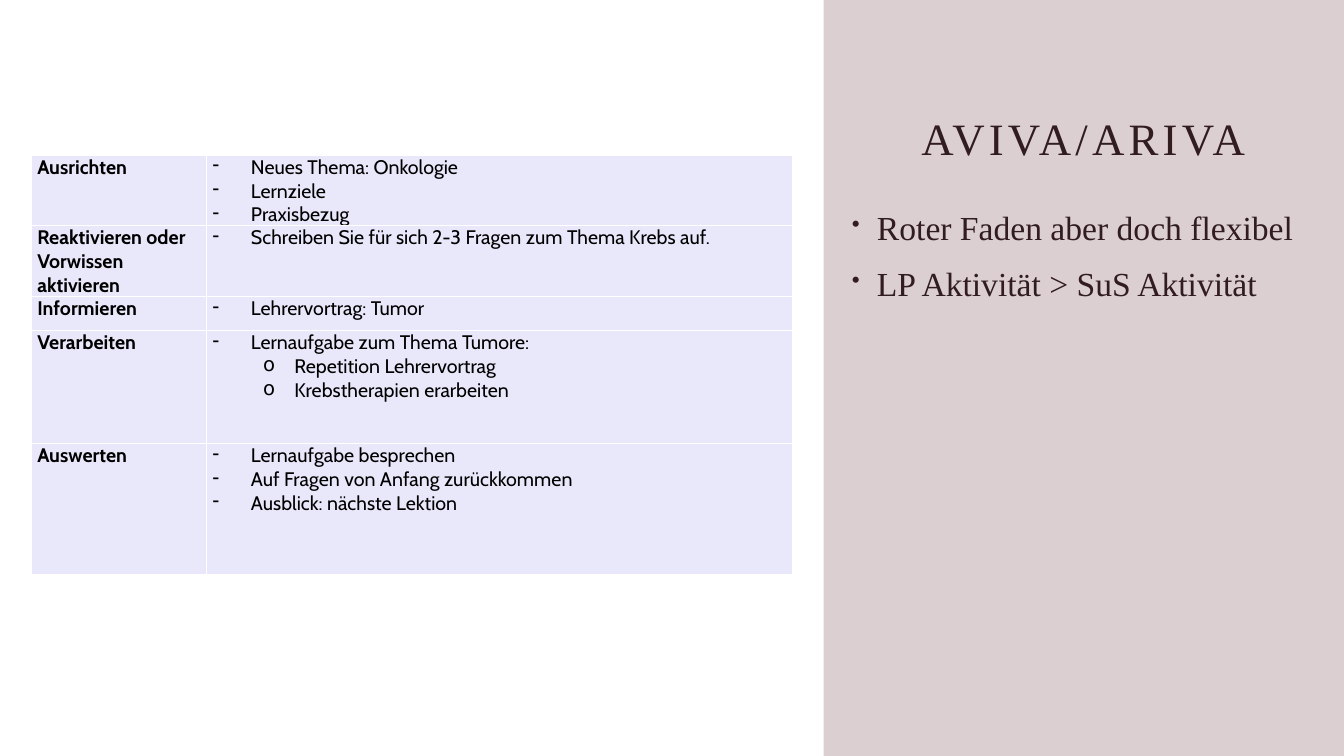
from dataclasses import dataclass

from lxml import etree
from pptx import Presentation
from pptx.dml.color import RGBColor
from pptx.enum.shapes import MSO_SHAPE
from pptx.enum.text import MSO_ANCHOR, PP_ALIGN
from pptx.oxml.ns import qn
from pptx.util import Inches, Pt

RECTANGLE = MSO_SHAPE.RECTANGLE
BOTTOM, TOP = MSO_ANCHOR.BOTTOM, MSO_ANCHOR.TOP
CENTER, LEFT = PP_ALIGN.CENTER, PP_ALIGN.LEFT


@dataclass(frozen=True)
class Theme:
    panel: str = "76434D"
    heading: str = "311C20"
    cell: str = "E9E8FA"
    border: str = "FFFFFF"
    table_text: str = "000000"
    serif: str = "Times New Roman"
    sans: str = "Cabin"
    title_size: int = 32
    body_size: int = 24
    table_size: int = 14


THEME = Theme()
COLUMN_WIDTHS = [1.74, 5.81]
DASH = {"bullet": "-", "margin": 0.38, "indent": -0.38}
CIRCLE = {"bullet": "o", "margin": 0.81, "indent": -0.31, "level": 1}
DOT = {"bullet": "•", "margin": 0.25, "indent": -0.25, "bullet_size": 70}

PHASES = [
    ("Ausrichten", 0.62, [
        ("Neues Thema: Onkologie", DASH),
        ("Lernziele", DASH),
        ("Praxisbezug", DASH),
    ]),
    ("Reaktivieren oder Vorwissen aktivieren", 0.62, [
        ("Schreiben Sie für sich 2-3 Fragen zum Thema Krebs auf.", DASH),
    ]),
    ("Informieren", 0.34, [("Lehrervortrag: Tumor", DASH)]),
    ("Verarbeiten", 1.12, [
        ("Lernaufgabe zum Thema Tumore:", DASH),
        ("Repetition Lehrervortrag", CIRCLE),
        ("Krebstherapien erarbeiten", CIRCLE),
    ]),
    ("Auswerten", 1.3, [
        ("Lernaufgabe besprechen", DASH),
        ("Auf Fragen von Anfang zurückkommen", DASH),
        ("Ausblick: nächste Lektion", DASH),
    ]),
]
KEY_POINTS = ["Roter Faden aber doch flexibel", "LP Aktivität > SuS Aktivität"]


def add_bullet(paragraph, bullet, margin, indent, bullet_size):
    properties = paragraph._p.get_or_add_pPr()
    properties.set("marL", str(Inches(margin)))
    properties.set("indent", str(Inches(indent)))
    size = etree.SubElement(properties, qn("a:buSzPct"))
    size.set("val", str(bullet_size * 1000))
    etree.SubElement(properties, qn("a:buChar")).set("char", bullet)


def write_text(paragraph, text, *, size, font, color, bold=False, align=LEFT,
               line_spacing=1.0, space_before=0, letter_spacing=0, level=0,
               bullet=None, margin=0, indent=0, bullet_size=100):
    paragraph.alignment = align
    paragraph.level = level
    paragraph.line_spacing = line_spacing
    paragraph.space_before = Pt(space_before)
    if bullet:
        add_bullet(paragraph, bullet, margin, indent, bullet_size)
    run = paragraph.add_run()
    run.text = text
    run.font.size = Pt(size)
    run.font.name = font
    run.font.bold = bold
    run.font.color.rgb = RGBColor.from_string(color)
    if letter_spacing:
        run._r.get_or_add_rPr().set("spc", str(letter_spacing * 100))


def write_paragraphs(frame, lines, **text_format):
    for index, (text, line_format) in enumerate(lines):
        paragraph = frame.add_paragraph() if index else frame.paragraphs[0]
        write_text(paragraph, text, **text_format, **line_format)


def add_panel(slide, left, top, width, height, color, opacity):
    panel = slide.shapes.add_shape(
        RECTANGLE, Inches(left), Inches(top), Inches(width), Inches(height))
    panel.shadow.inherit = False
    panel.line.fill.background()
    panel.fill.solid()
    panel.fill.fore_color.rgb = RGBColor.from_string(color)
    color_element = panel._element.spPr.find(f".//{qn('a:srgbClr')}")
    alpha = etree.SubElement(color_element, qn("a:alpha"))
    alpha.set("val", str(opacity * 1000))


def add_text_box(slide, left, top, width, height, lines, anchor=TOP, **text_format):
    box = slide.shapes.add_textbox(
        Inches(left), Inches(top), Inches(width), Inches(height))
    frame = box.text_frame
    frame.word_wrap = True
    frame.vertical_anchor = anchor
    write_paragraphs(frame, lines, **text_format)


def add_cell_borders(cell, color, width):
    properties = cell._tc.get_or_add_tcPr()
    for side in ("L", "R", "T", "B"):
        line = etree.SubElement(properties, qn(f"a:ln{side}"))
        line.set("w", str(Pt(width)))
        fill = etree.SubElement(line, qn("a:solidFill"))
        etree.SubElement(fill, qn("a:srgbClr")).set("val", color)


def fill_cell(cell, lines, bold=False):
    cell.margin_left = cell.margin_right = Inches(0.06)
    cell.margin_top = cell.margin_bottom = Inches(0)
    add_cell_borders(cell, THEME.border, 1)
    cell.fill.solid()
    cell.fill.fore_color.rgb = RGBColor.from_string(THEME.cell)
    write_paragraphs(cell.text_frame, lines, size=THEME.table_size,
                     font=THEME.sans, color=THEME.table_text, bold=bold)


def add_phase_table(slide, left, top):
    total_height = sum(height for _, height, _ in PHASES)
    table = slide.shapes.add_table(
        len(PHASES), len(COLUMN_WIDTHS), Inches(left), Inches(top),
        Inches(sum(COLUMN_WIDTHS)), Inches(total_height)).table
    table.first_row = False
    table.horz_banding = False
    for column, width in zip(table.columns, COLUMN_WIDTHS):
        column.width = Inches(width)
    for index, (phase, height, steps) in enumerate(PHASES):
        table.rows[index].height = Inches(height)
        fill_cell(table.cell(index, 0), [(phase, {})], bold=True)
        fill_cell(table.cell(index, 1), steps)


def main():
    presentation = Presentation()
    presentation.slide_width = Inches(13.33)
    presentation.slide_height = Inches(7.5)
    slide = presentation.slides.add_slide(presentation.slide_layouts[6])
    add_panel(slide, 8.17, 0, 5.16, 7.5, THEME.panel, opacity=25)
    add_text_box(slide, 8.89, 0.26, 3.71, 1.43, [("AVIVA/ARIVA", {})],
                 anchor=BOTTOM, align=CENTER, size=THEME.title_size,
                 font=THEME.serif, color=THEME.heading,
                 line_spacing=0.9, letter_spacing=3)
    add_text_box(slide, 8.35, 1.98, 4.83, 4.92,
                 [(point, DOT) for point in KEY_POINTS],
                 size=THEME.body_size, font=THEME.serif, color=THEME.heading,
                 line_spacing=1.05, space_before=10)
    add_phase_table(slide, 0.31, 1.54)
    presentation.save("out.pptx")


if __name__ == "__main__":
    main()
